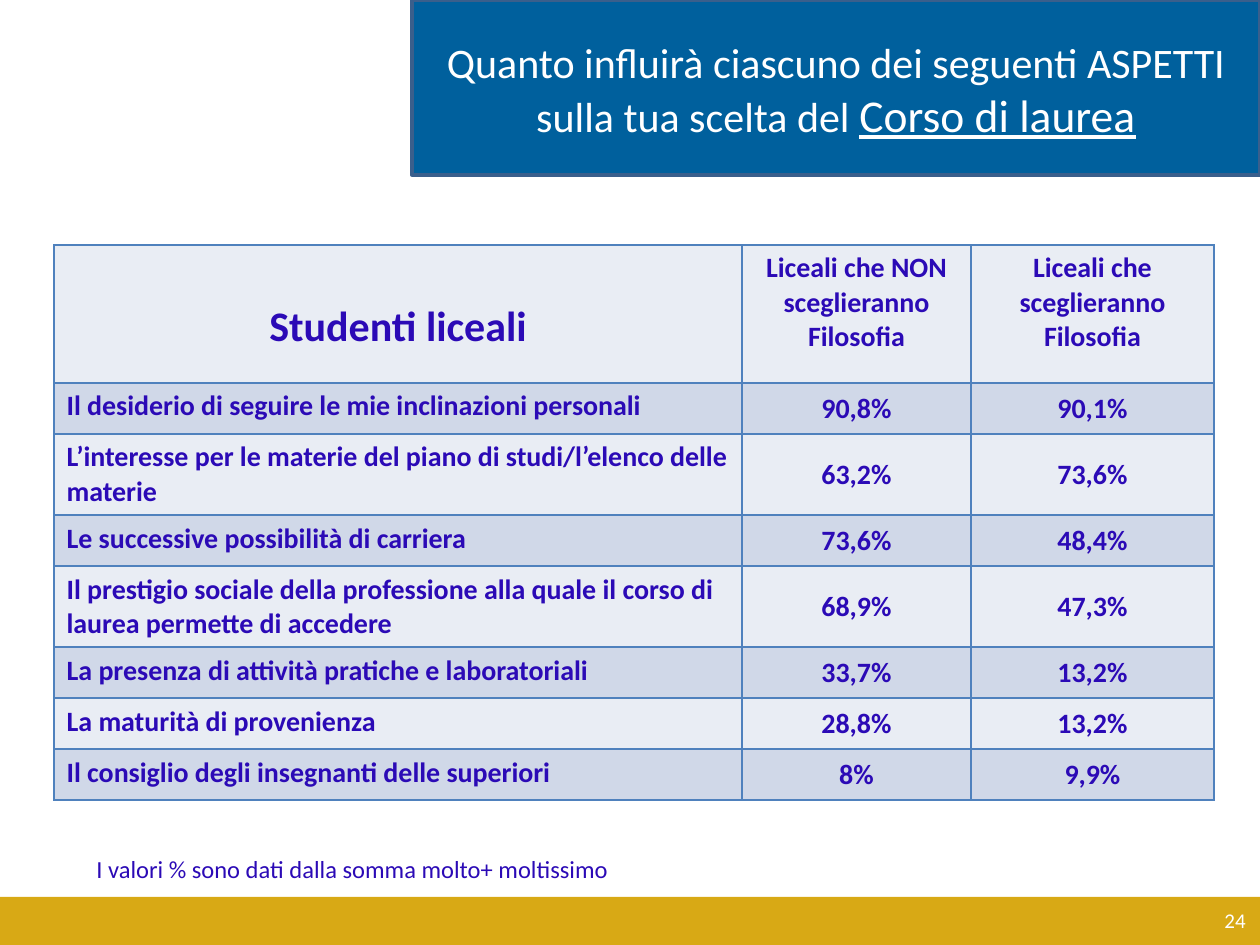
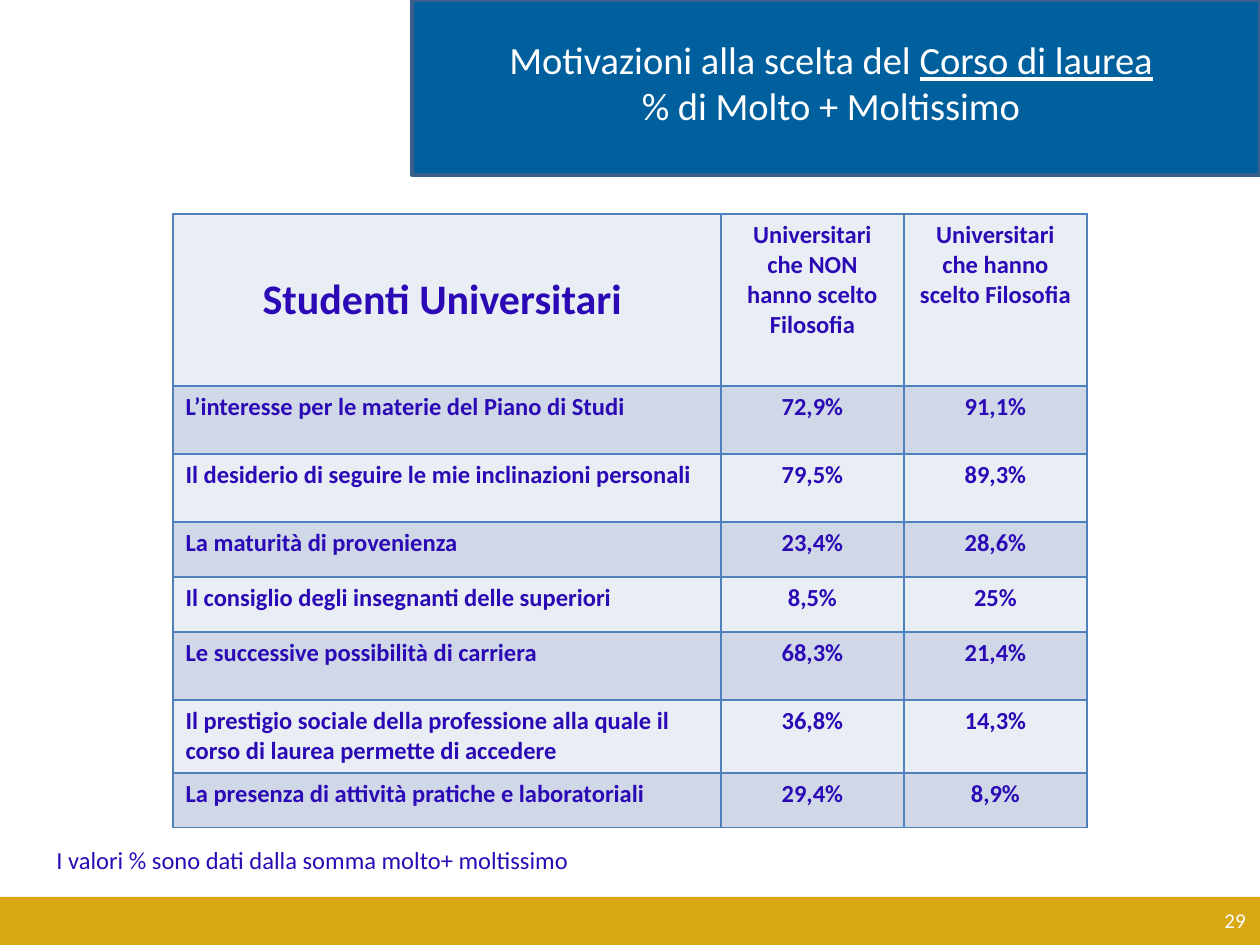
from pptx import Presentation, util as u
from pptx.dml.color import RGBColor
from pptx.enum import shapes, text
from pptx.oxml import parse_xml
from pptx.oxml.ns import nsdecls

FONT = "Calibri"
COLORS = {
    "gold": "D8A915", "blue": "00609D", "blue_edge": "3A5F8C", "white": "FFFFFF",
    "ink": "2B0AB6", "light": "E9EDF4", "dark": "D0D8E8", "grid": "4F81BD",
}
ALIGN = {"left": text.PP_ALIGN.LEFT, "center": text.PP_ALIGN.CENTER, "right": text.PP_ALIGN.RIGHT}
ANCHOR = {"top": text.MSO_ANCHOR.TOP, "middle": text.MSO_ANCHOR.MIDDLE}

# Content: title lines hold (text, size, underlined) runs
NOTE = "I valori % sono dati dalla somma molto+ moltissimo"
SURVEYS = [
    {
        "title": [[("Quanto influirà ciascuno dei seguenti ASPETTI sulla tua scelta del ", 24, False),
                   ("Corso di laurea", 26, True)]],
        "title_box": (412, 30, 848, 125),
        "header": ["Studenti liceali", "Liceali che NON sceglieranno Filosofia",
                   "Liceali che sceglieranno Filosofia"],
        "rows": [
            ("Il desiderio di seguire le mie inclinazioni personali", "90,8%", "90,1%"),
            ("L’interesse per le materie del piano di studi/l’elenco delle materie", "63,2%", "73,6%"),
            ("Le successive possibilità di carriera", "73,6%", "48,4%"),
            ("Il prestigio sociale della professione alla quale il corso di laurea permette di accedere",
             "68,9%", "47,3%"),
            ("La presenza di attività pratiche e laboratoriali", "33,7%", "13,2%"),
            ("La maturità di provenienza", "28,8%", "13,2%"),
            ("Il consiglio degli insegnanti delle superiori", "8%", "9,9%"),
        ],
        "table_at": (54, 245),
        "columns": [688, 229, 243],
        "heights": [138, 51, 81, 51, 81, 51, 51, 51],
        "size": 16,
        "heading_anchor": "top", "heading_margin": 57, "value_anchor": "middle",
        "note_box": (84, 848, 542, 43),
        "number": "24",
    },
    {
        "title": [[("Motivazioni alla scelta del ", 22, False), ("Corso di laurea", 22, True)],
                  [("% di Molto + Moltissimo", 22, False)]],
        "title_box": (407, 30, 848, 116),
        "header": ["Studenti Universitari ", "Universitari che NON hanno scelto Filosofia",
                   "Universitari che hanno scelto Filosofia"],
        "rows": [
            ("L’interesse per le materie del Piano di Studi", "72,9%", "91,1%"),
            ("Il desiderio di seguire le mie inclinazioni personali", "79,5%", "89,3%"),
            ("La maturità di provenienza", "23,4%", "28,6%"),
            ("Il consiglio degli insegnanti delle superiori", "8,5%", "25%"),
            ("Le successive possibilità di carriera", "68,3%", "21,4%"),
            ("Il prestigio sociale della professione alla quale il corso di laurea permette di accedere",
             "36,8%", "14,3%"),
            ("La presenza di attività pratiche e laboratoriali", "29,4%", "8,9%"),
        ],
        "table_at": (173, 214),
        "columns": [548, 183, 183],
        "heights": [172, 68, 68, 55, 55, 68, 73, 55],
        "size": 14,
        "heading_anchor": "middle", "heading_margin": 6, "value_anchor": "top",
        "note_box": (44, 839, 635, 43),
        "number": "29",
    },
]


def px(length):
    return u.Emu(round(length * 914400 / 126))


def color(name):
    return RGBColor.from_string(COLORS[name])


def add_text(paragraph, words, size=14, ink="ink", bold=False, underline=False, align="left"):
    paragraph.alignment = ALIGN[align]
    run = paragraph.add_run()
    run.text = words
    font = run.font
    font.name, font.size, font.bold, font.underline = FONT, u.Pt(size), bold, underline
    font.color.rgb = color(ink)


def add_band(slide, box, fill, edge=None):
    band = slide.shapes.add_shape(shapes.MSO_SHAPE.RECTANGLE, *map(px, box))
    band.shadow.inherit = False
    band.fill.solid()
    band.fill.fore_color.rgb = color(fill)
    if edge:
        band.line.color.rgb = color(edge)
        band.line.width = u.Pt(2)
    else:
        band.line.fill.background()


def add_label(slide, box, words, anchor="top", **style):
    frame = slide.shapes.add_textbox(*map(px, box)).text_frame
    frame.word_wrap = True
    frame.vertical_anchor = ANCHOR[anchor]
    add_text(frame.paragraphs[0], words, **style)


def fill_title(slide, lines, box):
    title = slide.shapes.title
    title.left, title.top, title.width, title.height = map(px, box)
    title.element.getparent().append(title.element)  # in front of the band
    frame = title.text_frame
    frame.auto_size = text.MSO_AUTO_SIZE.NONE
    frame.vertical_anchor = ANCHOR["top"]
    paragraph = frame.paragraphs[0]
    for index, line in enumerate(lines):
        if index:
            paragraph.add_line_break()
        for words, size, underline in line:
            add_text(paragraph, words, size=size, ink="white", underline=underline, align="center")


def format_cell(cell, fill):
    cell.fill.solid()
    cell.fill.fore_color.rgb = color(fill)
    properties = cell._tc.get_or_add_tcPr()
    for index, side in enumerate(("lnL", "lnR", "lnT", "lnB")):
        properties.insert(index, parse_xml(
            f'<a:{side} {nsdecls("a")} w="12700"><a:solidFill>'
            f'<a:srgbClr val="{COLORS["grid"]}"/></a:solidFill></a:{side}>'))


def add_survey_table(slide, survey):
    columns, heights = survey["columns"], survey["heights"]
    box = (*survey["table_at"], sum(columns), sum(heights))
    table = slide.shapes.add_table(len(heights), len(columns), *map(px, box)).table
    table.first_row = table.horz_banding = False
    for column, width in zip(table.columns, columns):
        column.width = px(width)
    for row, height in zip(table.rows, heights):
        row.height = px(height)
    for r, values in enumerate([survey["header"], *survey["rows"]]):
        for c, words in enumerate(values):
            cell = table.cell(r, c)
            heading = r == c == 0
            format_cell(cell, "dark" if r % 2 else "light")
            if heading:
                cell.margin_top = px(survey["heading_margin"])
                cell.vertical_anchor = ANCHOR[survey["heading_anchor"]]
            elif r and c:
                cell.vertical_anchor = ANCHOR[survey["value_anchor"]]
            add_text(cell.text_frame.paragraphs[0], words, size=24 if heading else survey["size"],
                     bold=True, align="left" if r and not c else "center")


def add_survey_slide(presentation, survey):
    slide = presentation.slides.add_slide(presentation.slide_layouts[5])
    # Bands and title
    add_band(slide, (0, 897, 1260, 48), "gold")
    add_band(slide, (412, 0, 848, 175), "blue", edge="blue_edge")
    fill_title(slide, survey["title"], survey["title_box"])
    # Table, note and slide number
    add_survey_table(slide, survey)
    add_label(slide, survey["note_box"], NOTE)
    add_label(slide, (964, 895, 294, 50), survey["number"], anchor="middle",
              size=12, ink="white", align="right")


def main():
    presentation = Presentation()
    presentation.slide_width, presentation.slide_height = px(1260), px(945)
    for survey in SURVEYS:
        add_survey_slide(presentation, survey)
    presentation.save("out.pptx")


if __name__ == "__main__":
    main()
